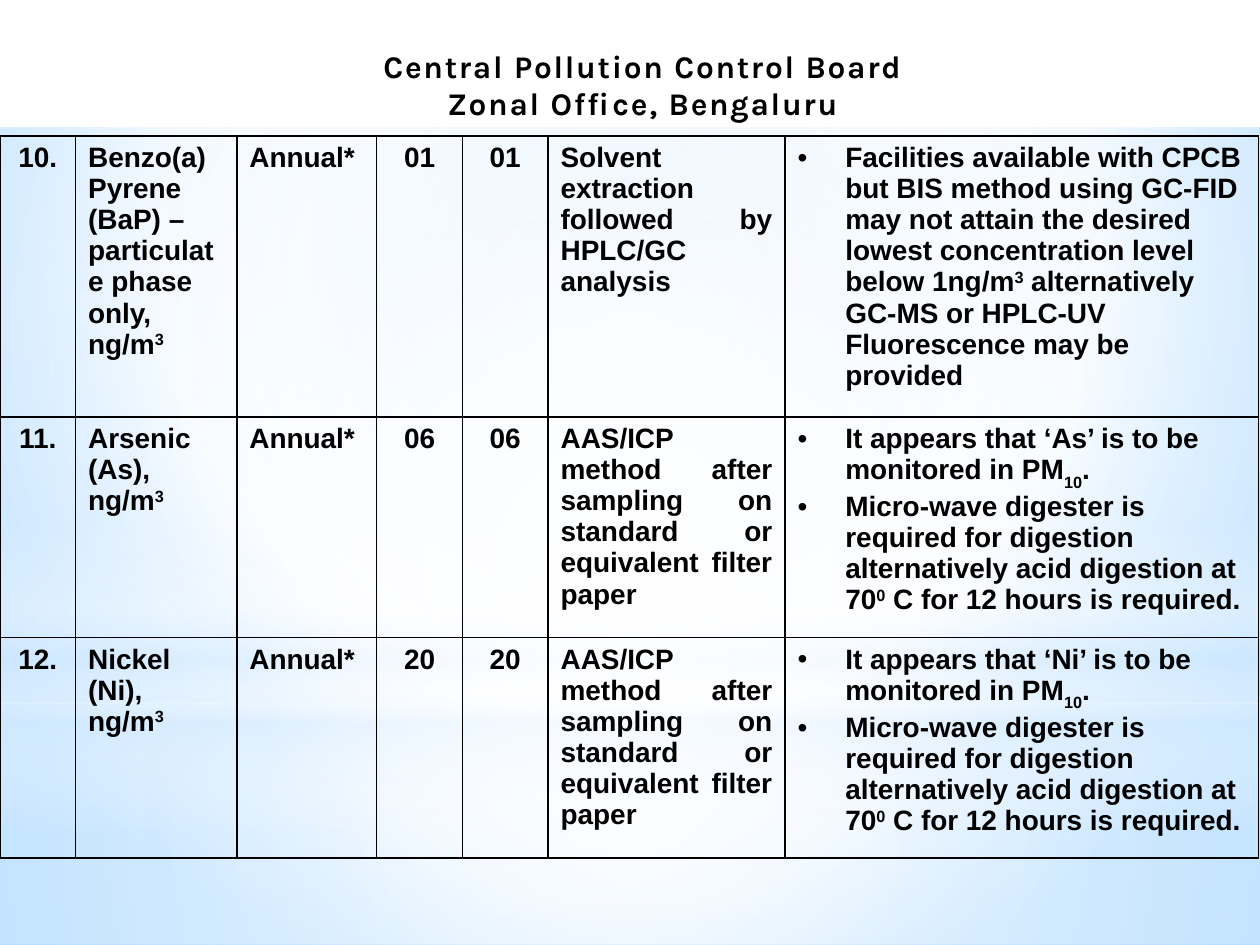
from lxml import etree
from pptx import Presentation
from pptx.dml.color import RGBColor
from pptx.enum.shapes import MSO_SHAPE as Shape
from pptx.enum.text import MSO_ANCHOR as Anchor, PP_ALIGN as Align
from pptx.oxml.ns import qn
from pptx.util import Inches, Pt

COLORS = {"black": "000000", "white": "FFFFFF", "pale": "D6ECFF",
          "light": "C2E3FF", "sky": "79C1FF"}
SUPERSCRIPT, SUBSCRIPT = 30000, -30000


def paint_gradient(fill, element, stops, center=(50, 50, 50, 50), angle=None):
    """Fill with (position, colour, opacity) stops, radial unless an angle is given."""
    fill.gradient()
    gradient = element.find(".//" + qn("a:gradFill"))
    for child in list(gradient):
        gradient.remove(child)
    stop_list = etree.SubElement(gradient, qn("a:gsLst"))
    for position, color, opacity in stops:
        stop = etree.SubElement(stop_list, qn("a:gs"), pos=str(position * 1000))
        rgb = etree.SubElement(stop, qn("a:srgbClr"), val=COLORS[color])
        if opacity < 100:
            etree.SubElement(rgb, qn("a:alpha"), val=str(opacity * 1000))
    if angle is not None:
        etree.SubElement(gradient, qn("a:lin"), ang=str(angle * 60000), scaled="0")
        return
    circle = etree.SubElement(gradient, qn("a:path"), path="circle")
    edges = {side: str(value * 1000) for side, value in zip("ltrb", center)}
    etree.SubElement(circle, qn("a:fillToRect"), **edges)


def write_text(frame, paragraphs, font="Arial", size=16, align=Align.LEFT,
               hanging=False, bullet=False, spacing=None):
    """Write paragraphs, each a list of strings or (string, baseline) pairs."""
    frame.word_wrap = True
    for index, runs in enumerate(paragraphs):
        paragraph = frame.paragraphs[0] if index == 0 else frame.add_paragraph()
        paragraph.alignment = align
        properties = paragraph._p.get_or_add_pPr()
        if hanging:
            properties.set("marL", str(Inches(0.38)))
            properties.set("indent", str(Inches(-0.38)))
        if bullet:
            etree.SubElement(properties, qn("a:buFont"), typeface="Arial")
            etree.SubElement(properties, qn("a:buChar"), char="•")
            tabs = etree.SubElement(properties, qn("a:tabLst"))
            etree.SubElement(tabs, qn("a:tab"), pos=str(Inches(0.25)), algn="l")
        for part in runs:
            text, baseline = (part, 0) if isinstance(part, str) else part
            run = paragraph.add_run()
            run.text = text
            run.font.name = font
            run.font.size = Pt(size)
            run.font.bold = True
            run.font.color.rgb = RGBColor.from_string(COLORS["black"])
            if baseline:
                run.font._element.set("baseline", str(baseline))
            if spacing:
                run.font._element.set("spc", str(spacing * 100))


presentation = Presentation()
presentation.slide_width = Inches(10)
presentation.slide_height = Inches(7.5)
slide = presentation.slides.add_slide(presentation.slide_layouts[5])

# Background and its layers of light
paint_gradient(slide.background.fill, slide._element,
               [(0, "light", 100), (60, "white", 100), (100, "sky", 100)],
               center=(20, 10, 20, 60))
layers = [
    (Shape.RECTANGLE, 5.58, 1.92, None,
     [(0, "white", 91), (37, "white", 76), (100, "pale", 79)]),
    (Shape.RECTANGLE, 0, 5.58, None,
     [(0, "white", 89), (48, "white", 62), (100, "pale", 79)]),
    (Shape.RECTANGLE, 4.12, 2.5, 90,
     [(0, "white", 0), (29, "white", 30), (45, "pale", 40),
      (55, "white", 26), (65, "pale", 60), (100, "white", 0)]),
    (Shape.OVAL, 1.75, 5.58, None, [(0, "white", 100), (56, "white", 0)]),
]
for kind, top, height, angle, stops in layers:
    layer = slide.shapes.add_shape(kind, 0, Inches(top), Inches(10), Inches(height))
    layer.shadow.inherit = False
    layer.line.fill.background()
    paint_gradient(layer.fill, layer._element, stops, angle=angle)

# Title band, brought in front of the layers
title = slide.shapes.title
slide.shapes._spTree.append(title._element)
title.left, title.top, title.width, title.height = 0, 0, Inches(10), Inches(1.01)
title.fill.solid()
title.fill.fore_color.rgb = RGBColor.from_string(COLORS["white"])
frame = title.text_frame
frame.vertical_anchor = Anchor.BOTTOM
frame.margin_left, frame.margin_right = Inches(0.3), Inches(0.1)
frame.margin_top = frame.margin_bottom = Inches(0.04)
write_text(frame, [["Central Pollution Control Board"], ["Zonal Office, Bengaluru"]],
           font="Karla", size=18, align=Align.CENTER, spacing=1)

# Table of pollutants
cubed = ("3", SUPERSCRIPT)
metal_method = "AAS/ICP method after sampling on standard or equivalent filter paper"
digestion = ["Micro-wave digester is required for digestion alternatively acid digestion at 70",
             ("0", SUPERSCRIPT), " C for 12 hours is required."]
rows = [
    ("10.", "Benzo(a)Pyrene (BaP) – particulate phase only, ng/m", "01",
     "Solvent extraction followed by HPLC/GC analysis",
     [["Facilities available with CPCB but BIS method using GC-FID may not attain "
       "the desired lowest concentration level below 1ng/m", cubed,
       " alternatively GC-MS or HPLC-UV Fluorescence may be provided"]]),
]
for number, name, symbol, limit in [("11.", "Arsenic", "As", "06"),
                                    ("12.", "Nickel", "Ni", "20")]:
    monitoring = [f"It appears that ‘{symbol}’ is to be monitored in PM",
                  ("10", SUBSCRIPT), "."]
    rows.append((number, f"{name} ({symbol}), ng/m", limit, metal_method,
                 [monitoring, digestion]))

column_widths = [0.6, 1.28, 1.11, 0.68, 0.68, 1.88, 3.76]
row_heights = [2.23, 1.75, 1.75]
table = slide.shapes.add_table(len(rows), len(column_widths), 0, Inches(1.08),
                               Inches(10), Inches(sum(row_heights))).table
table.first_row = table.horz_banding = False
for column, width in zip(table.columns, column_widths):
    column.width = Inches(width)
for row, height in zip(table.rows, row_heights):
    row.height = Inches(height)

centered = {"align": Align.CENTER, "hanging": True}
formats = [centered, {}, {"hanging": True}, centered, centered,
           {"align": Align.JUSTIFY}, {"hanging": True, "bullet": True}]
for row, (number, pollutant, limit, method, remarks) in zip(table.rows, rows):
    contents = [[[number]], [[pollutant, cubed]], [["Annual*"]], [[limit]], [[limit]],
                [[method]], remarks]
    for cell, paragraphs, text_format in zip(row.cells, contents, formats):
        write_text(cell.text_frame, paragraphs, **text_format)
        cell_properties = cell._tc.get_or_add_tcPr()
        for side in ("a:lnL", "a:lnR", "a:lnT", "a:lnB"):
            border = etree.SubElement(cell_properties, qn(side), w=str(Pt(1)))
            border_fill = etree.SubElement(border, qn("a:solidFill"))
            etree.SubElement(border_fill, qn("a:srgbClr"), val=COLORS["black"])
        cell.fill.background()

presentation.save("out.pptx")
